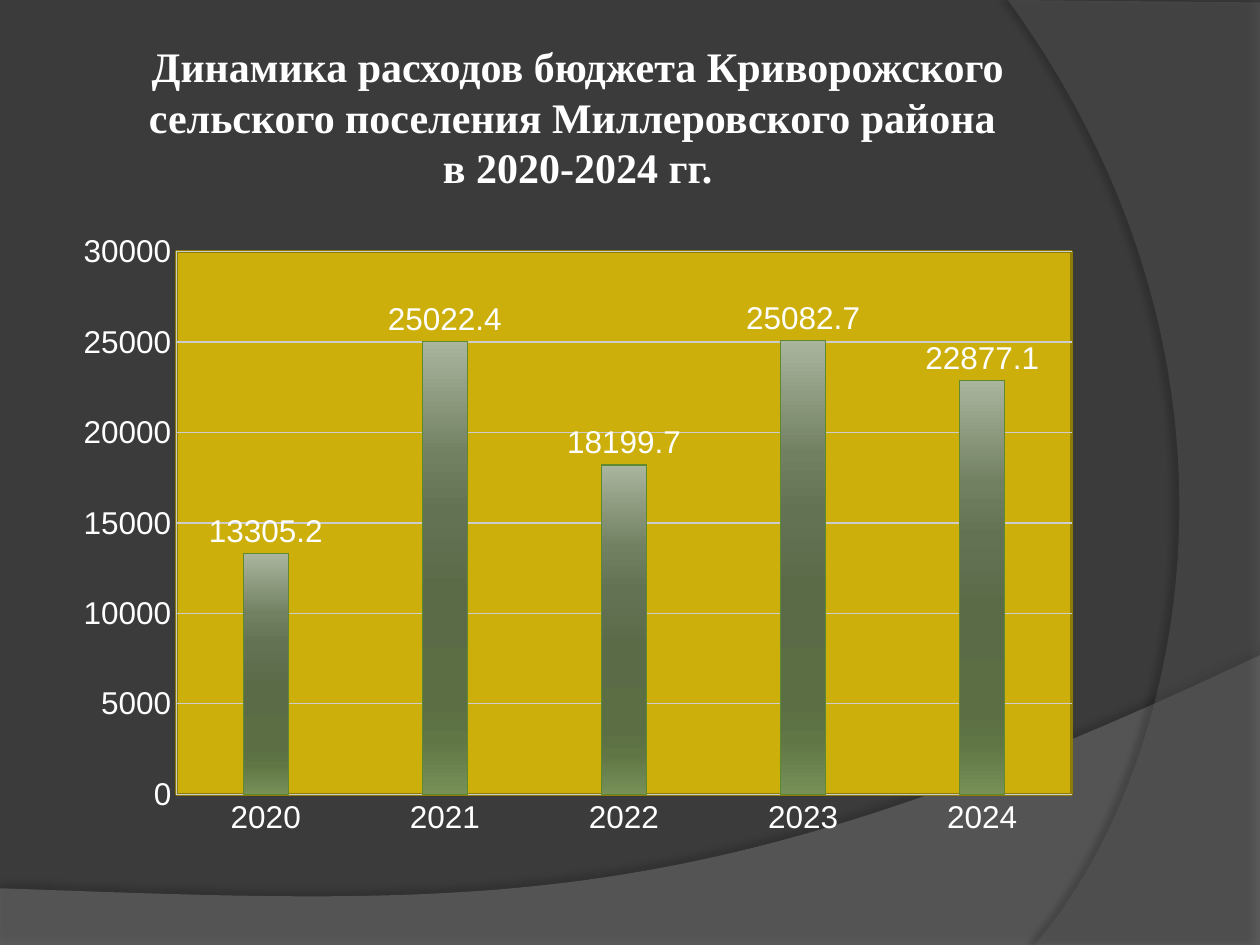
"""Build a slide with a column chart of budget spending by year."""
from pptx import Presentation
from pptx import oxml
from pptx import util as u
from pptx.chart import data as cd
from pptx.dml.color import RGBColor
from pptx.enum import chart as ch, text as tx
from pptx.oxml import ns

BACK = RGBColor(0x3B, 0x3B, 0x3B)
WAVE = RGBColor(0x7F, 0x7F, 0x7F)
ARC = RGBColor(0x5E, 0x5E, 0x5E)
WHITE = RGBColor(0xFF, 0xFF, 0xFF)
GRID = RGBColor(0xCC, 0xCC, 0xCC)
EDGE = RGBColor(0x5F, 0x88, 0x2F)
GOLD = RGBColor(0xCC, 0xAF, 0x0A)
RIM = RGBColor(0x8F, 0x7B, 0x07)

TITLE = ("Динамика расходов бюджета Криворожского сельского поселения "
         "Миллеровского района \vв 2020-2024 гг.")
SPEND = {"2020": 13305.2, "2021": 25022.4, "2022": 18199.7,
         "2023": 25082.7, "2024": 22877.1}
STOPS = [(0, "A9B59D"), (25, "728062"), (38, "647254"), (55, "5B6B48"),
         (80, "5B6E44"), (88, "607645"), (100, "769058")]
BANDS = [
    dict(curve=[(10, 5.2), (5.59, 7.29), (3.91, 7.19), (0, 7.05)],
         rest=[(0, 7.5), (10, 7.5)], color=WAVE, alpha=45, shade=35, turn=270),
    dict(curve=[(8.21, 7.5), (9.35, 6.19), (10.18, 3), (8, 0)],
         rest=[(10, 0.02), (10, 7.5)], color=ARC, alpha=40, shade=45, turn=180),
]
FRAME = dict(x=0.11, y=0.05, w=0.87, h=0.87)


def node(tag, body, attrs=""):
    return oxml.parse_xml(
        f'<{tag} {ns.nsdecls("a", "c")} {attrs}>{body}</{tag}>')


def bezier(pts, steps=60):
    for i in range(steps + 1):
        t = i / steps
        ks = ((1 - t) ** 3, 3 * t * (1 - t) ** 2, 3 * t * t * (1 - t), t ** 3)
        yield tuple(sum(k * p[d] for k, p in zip(ks, pts)) for d in (0, 1))


def add_band(slide, curve, rest, color, alpha, shade, turn):
    pts = [(u.Inches(x), u.Inches(y)) for x, y in [*bezier(curve), *rest]]
    pen = slide.shapes.build_freeform(*pts[0])
    pen.add_line_segments(pts[1:])
    band = pen.convert_to_shape()
    band.fill.solid()
    band.fill.fore_color.rgb = color
    band.line.fill.background()
    props = band.element.spPr
    tone = props.find(".//" + ns.qn("a:srgbClr"))
    tone.append(node("a:alpha", "", f'val="{alpha * 1000}"'))
    props.append(node("a:effectLst", (
        f'<a:outerShdw blurRad="{u.Pt(4)}" dist="{u.Pt(4)}" '
        f'dir="{turn * 60000}" algn="ctr" rotWithShape="0">'
        f'<a:srgbClr val="000000"><a:alpha val="{shade * 1000}"/>'
        '</a:srgbClr></a:outerShdw>')))


def add_text(slide, words, left, top, width, height, size, face, color, bold):
    box = slide.shapes.add_textbox(*map(u.Inches, (left, top, width, height)))
    frame = box.text_frame
    frame.word_wrap = True
    frame.vertical_anchor = tx.MSO_ANCHOR.MIDDLE
    frame.margin_left = frame.margin_right = u.Inches(0.05)
    frame.margin_top = frame.margin_bottom = u.Inches(0.05)
    para = frame.paragraphs[0]
    para.text = words
    para.alignment = tx.PP_ALIGN.CENTER
    for run in para.runs:
        font = run.font
        font.size, font.name, font.bold = u.Pt(size), face, bold
        font.color.rgb = color


def style_plot(chart):
    area = chart.element.find(".//" + ns.qn("c:plotArea"))
    for old in area.findall(ns.qn("c:layout")):
        area.remove(old)
    rules = ('<c:layoutTarget val="inner"/><c:xMode val="edge"/>'
             '<c:yMode val="edge"/>')
    sides = "".join(f'<c:{k} val="{v}"/>' for k, v in FRAME.items())
    area.insert(0, node(
        "c:layout", f"<c:manualLayout>{rules}{sides}</c:manualLayout>"))
    gold, rim = (f'<a:solidFill><a:srgbClr val="{c}"/></a:solidFill>'
                 for c in (GOLD, RIM))
    area.append(node("c:spPr", f'{gold}<a:ln w="{u.Pt(1.5)}">{rim}</a:ln>'))


def style_bars(chart):
    bars = chart.plots[0].series[0]
    bars.invert_if_negative = False
    bars.format.line.color.rgb = EDGE
    bars.format.line.width = u.Pt(0.75)
    stops = "".join(f'<a:gs pos="{p * 1000}"><a:srgbClr val="{c}"/></a:gs>'
                    for p, c in STOPS)
    props = chart.element.find(f".//{ns.qn('c:ser')}/{ns.qn('c:spPr')}")
    props.insert(0, node("a:gradFill", (
        f'<a:gsLst>{stops}</a:gsLst><a:lin ang="5400000" scaled="0"/>')))


def add_bars(slide):
    data = cd.CategoryChartData()
    data.categories = list(SPEND)
    data.add_series("Series 1", list(SPEND.values()))
    chart = slide.shapes.add_chart(
        ch.XL_CHART_TYPE.COLUMN_CLUSTERED,
        *map(u.Inches, (0.5, 1.75, 8.17, 4.95)), data).chart
    chart.has_legend = chart.has_title = False
    chart.font.size, chart.font.name = u.Pt(18), "Arial"
    chart.font.color.rgb = WHITE
    for axis in (chart.category_axis, chart.value_axis):
        axis.major_tick_mark = axis.minor_tick_mark = ch.XL_TICK_MARK.NONE
        axis.format.line.color.rgb = GRID
    axis = chart.value_axis
    axis.minimum_scale, axis.maximum_scale, axis.major_unit = 0, 30000, 5000
    axis.major_gridlines.format.line.color.rgb = GRID
    plot = chart.plots[0]
    plot.gap_width, plot.vary_by_categories = 300, False
    plot.has_data_labels = True
    tags = plot.data_labels
    tags.show_value = True
    tags.position = ch.XL_LABEL_POSITION.OUTSIDE_END
    style_bars(chart)
    style_plot(chart)


def main():
    deck = Presentation()
    deck.slide_width, deck.slide_height = u.Inches(10), u.Inches(7.5)
    slide = deck.slides.add_slide(deck.slide_layouts[6])
    slide.background.fill.solid()
    slide.background.fill.fore_color.rgb = BACK
    for band in BANDS:
        add_band(slide, **band)
    add_text(slide, TITLE, left=0.5, top=0.3, width=8.17, height=1.25,
             size=24, face="Times New Roman", color=WHITE, bold=True)
    add_bars(slide)
    deck.save("out.pptx")


if __name__ == "__main__":
    main()
